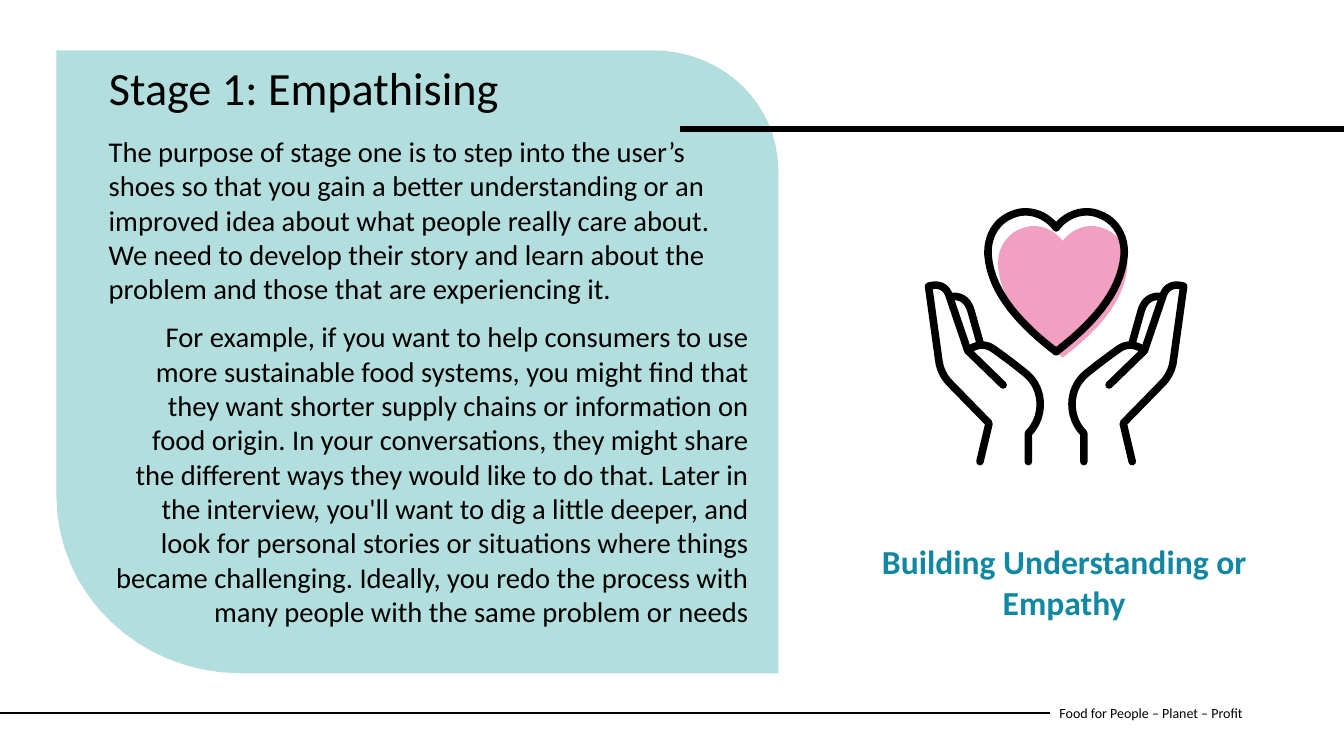
from dataclasses import dataclass

from lxml import etree
from pptx import Presentation
from pptx import util as u
from pptx.dml.color import RGBColor
from pptx.enum import shapes, text
from pptx.oxml import ns
from pptx.shapes.base import BaseShape
from pptx.slide import Slide
from pptx.text.text import TextFrame

Point = tuple[float, float]
Segment = tuple[Point, ...]  # one point: straight line; three points: Bezier curve


@dataclass(frozen=True)
class Theme:
    font: str = "Calibri"
    black: str = "000000"
    panel: str = "B2DEDD"
    heart: str = "F1A0C2"
    accent: str = "1188A3"
    title_size: float = 33
    body_size: float = 20.4
    caption_size: float = 24
    footer_size: float = 10
    icon_stroke: float = 5.4


@dataclass(frozen=True)
class Outline:
    start: Point
    segments: tuple[Segment, ...]

    def points(self) -> list[Point]:
        result = [self.start]
        for segment in self.segments:
            if len(segment) == 1:
                result.append(segment[0])
                continue
            corners = (result[-1], *segment)
            for step in range(1, 17):
                t = step / 16
                weights = ((1 - t) ** 3, 3 * t * (1 - t) ** 2, 3 * t * t * (1 - t), t ** 3)
                result.append((sum(w * c[0] for w, c in zip(weights, corners)),
                               sum(w * c[1] for w, c in zip(weights, corners))))
        return result


@dataclass(frozen=True)
class Label:
    left: float
    top: float
    width: float
    height: float
    paragraphs: tuple[tuple[str, text.PP_ALIGN], ...]
    size: float
    color: str = Theme.black
    bold: bool = False
    space_before: float = 0
    line_spacing: float = 1.0
    anchor: text.MSO_ANCHOR = text.MSO_ANCHOR.TOP


THEME = Theme()
LEFT, CENTER, RIGHT = text.PP_ALIGN.LEFT, text.PP_ALIGN.CENTER, text.PP_ALIGN.RIGHT
ICON_AXIS = 10.475

PANEL = Outline((7.72, 6.68), (
    ((2.39, 6.68),), ((1.38, 6.68), (0.56, 5.89), (0.56, 4.92)),
    ((0.56, 0.5),), ((6.48, 0.5),), ((7.17, 0.5), (7.72, 1.03), (7.72, 1.69))))

# Left half of the heart and the right hand; each is mirrored on the icon axis
HALF_HEART = Outline((ICON_AXIS, 2.26), (
    ((10.38, 2.13), (10.2, 2.06), (10.04, 2.13)),
    ((9.88, 2.19), (9.79, 2.35), (9.8, 2.53)),
    ((9.83, 2.92), (10.15, 3.24), (ICON_AXIS, 3.49))))
PALM = Outline((10.75, 4.58), (
    ((10.75, 4.3),), ((10.59, 4.14), (10.59, 3.86), (10.77, 3.71)),
    ((10.88, 3.62), (11, 3.53), (11.1, 3.46)),
    ((11.17, 3.41), (11.27, 3.41), (11.35, 3.48)), ((11, 3.82),)))
LITTLE_FINGERS = Outline((11.35, 3.48), (
    ((11.53, 2.95),), ((11.56, 2.84), (11.64, 2.81), (11.74, 2.84)), ((11.64, 3.56),),
    ((11.63, 3.65), (11.6, 3.72), (11.54, 3.79)), ((11.14, 4.2),), ((11.23, 4.58),)))
INDEX_FINGER = Outline((11.5, 2.94), (
    ((11.4, 2.94), (11.35, 2.99), (11.32, 3.08)), ((11.23, 3.4),)))

TITLE = Label(0.98, 0.6, 5.46, 0.68, (("Stage 1: Empathising", LEFT),),
              THEME.title_size, space_before=10, line_spacing=0.9)
BODY = Label(0.98, 1.28, 6.54, 5.09, (
    ("The purpose of stage one is to step into the user’s shoes so that you gain a better "
     "understanding or an improved idea about what people really care about. We need to develop "
     "their story and learn about the problem and those that are experiencing it.", LEFT),
    ("For example, if you want to help consumers to use more sustainable food systems, you might "
     "find that they want shorter supply chains or information on food origin. In your "
     "conversations, they might share the different ways they would like to do that. Later in the "
     "interview, you'll want to dig a little deeper, and look for personal stories or situations "
     "where things became challenging. Ideally, you redo the process with many people with the "
     "same problem or needs", RIGHT)), THEME.body_size, space_before=10)
CAPTION = Label(8.44, 5.32, 4.23, 0.91, (("Building Understanding or Empathy", CENTER),),
                THEME.caption_size, THEME.accent, bold=True)
FOOTER = Label(10.41, 6.87, 2.73, 0.4, (("Food for People – Planet – Profit", LEFT),),
               THEME.footer_size, anchor=text.MSO_ANCHOR.MIDDLE)


def write(frame: TextFrame, label: Label) -> None:
    frame.word_wrap = True
    frame.auto_size = text.MSO_AUTO_SIZE.NONE
    frame.vertical_anchor = label.anchor
    for index, (wording, alignment) in enumerate(label.paragraphs):
        para = frame.add_paragraph() if index else frame.paragraphs[0]
        para.alignment = alignment
        para.space_before = u.Pt(label.space_before)
        para.line_spacing = label.line_spacing
        span = para.add_run()
        span.text = wording
        span.font.name = THEME.font
        span.font.size = u.Pt(label.size)
        span.font.bold = label.bold
        span.font.color.rgb = RGBColor.from_string(label.color)


def add_label(page: Slide, label: Label) -> None:
    box = page.shapes.add_textbox(*map(u.Inches, (label.left, label.top, label.width, label.height)))
    write(box.text_frame, label)


def fill(shape: BaseShape, color: str) -> None:
    shape.shadow.inherit = False
    shape.fill.solid()
    shape.fill.fore_color.rgb = RGBColor.from_string(color)
    shape.line.fill.background()


def add_outline(page: Slide, points: list[Point], closed: bool) -> BaseShape:
    corners = [(u.Inches(x), u.Inches(y)) for x, y in points]
    builder = page.shapes.build_freeform(*corners[0], scale=1.0)
    builder.add_line_segments(corners[1:], close=closed)
    return builder.convert_to_shape()


def draw_line(shape: BaseShape, width: float, join: str) -> None:
    shape.line.width = u.Pt(width)
    shape.line.color.rgb = RGBColor.from_string(THEME.black)
    etree.SubElement(shape.element.spPr.find(ns.qn("a:ln")), ns.qn(join))


def add_stroke(page: Slide, points: list[Point]) -> None:
    stroke = add_outline(page, points, closed=False)
    stroke.shadow.inherit = False
    stroke.fill.background()
    draw_line(stroke, THEME.icon_stroke, "a:round")
    stroke.element.spPr.find(ns.qn("a:ln")).set("cap", "rnd")


def mirror(points: list[Point]) -> list[Point]:
    return [(2 * ICON_AXIS - x, y) for x, y in points]


def add_icon(page: Slide) -> None:
    half = HALF_HEART.points()
    whole = half + mirror(half)[::-1]
    tint = [(10.54 + 0.95 * (x - ICON_AXIS), 2.24 + 0.94 * (y - 2.1)) for x, y in whole]
    fill(add_outline(page, tint, closed=True), THEME.heart)
    for outline in (HALF_HEART, PALM, LITTLE_FINGERS, INDEX_FINGER):
        add_stroke(page, outline.points())
        add_stroke(page, mirror(outline.points()))


def main() -> None:
    deck = Presentation()
    deck.slide_width, deck.slide_height = u.Inches(13.33), u.Inches(7.5)
    page = deck.slides.add_slide(deck.slide_layouts[5])

    # Footer with its rule
    add_label(page, FOOTER)
    rule = page.shapes.add_connector(shapes.MSO_CONNECTOR.STRAIGHT,
                                     *map(u.Inches, (0, 7.07, 10.41, 7.07)))
    draw_line(rule, 1.5, "a:round")
    etree.SubElement(rule.element.spPr, ns.qn("a:effectLst"))

    # Panel and the bar across its edge
    panel = add_outline(page, PANEL.points(), closed=True)
    fill(panel, THEME.panel)
    bar = page.shapes.add_shape(shapes.MSO_SHAPE.RECTANGLE,
                                *map(u.Inches, (6.76, 1.26, 6.57, 0.04)))
    fill(bar, THEME.black)
    draw_line(bar, 1.93, "a:miter")

    # Title, brought in front of the panel
    title = page.shapes.title
    title.left, title.top = u.Inches(TITLE.left), u.Inches(TITLE.top)
    title.width, title.height = u.Inches(TITLE.width), u.Inches(TITLE.height)
    write(title.text_frame, TITLE)
    panel.element.getparent().append(title.element)

    # Body, icon and caption
    add_label(page, BODY)
    add_icon(page)
    add_label(page, CAPTION)
    deck.save("out.pptx")


if __name__ == "__main__":
    main()
